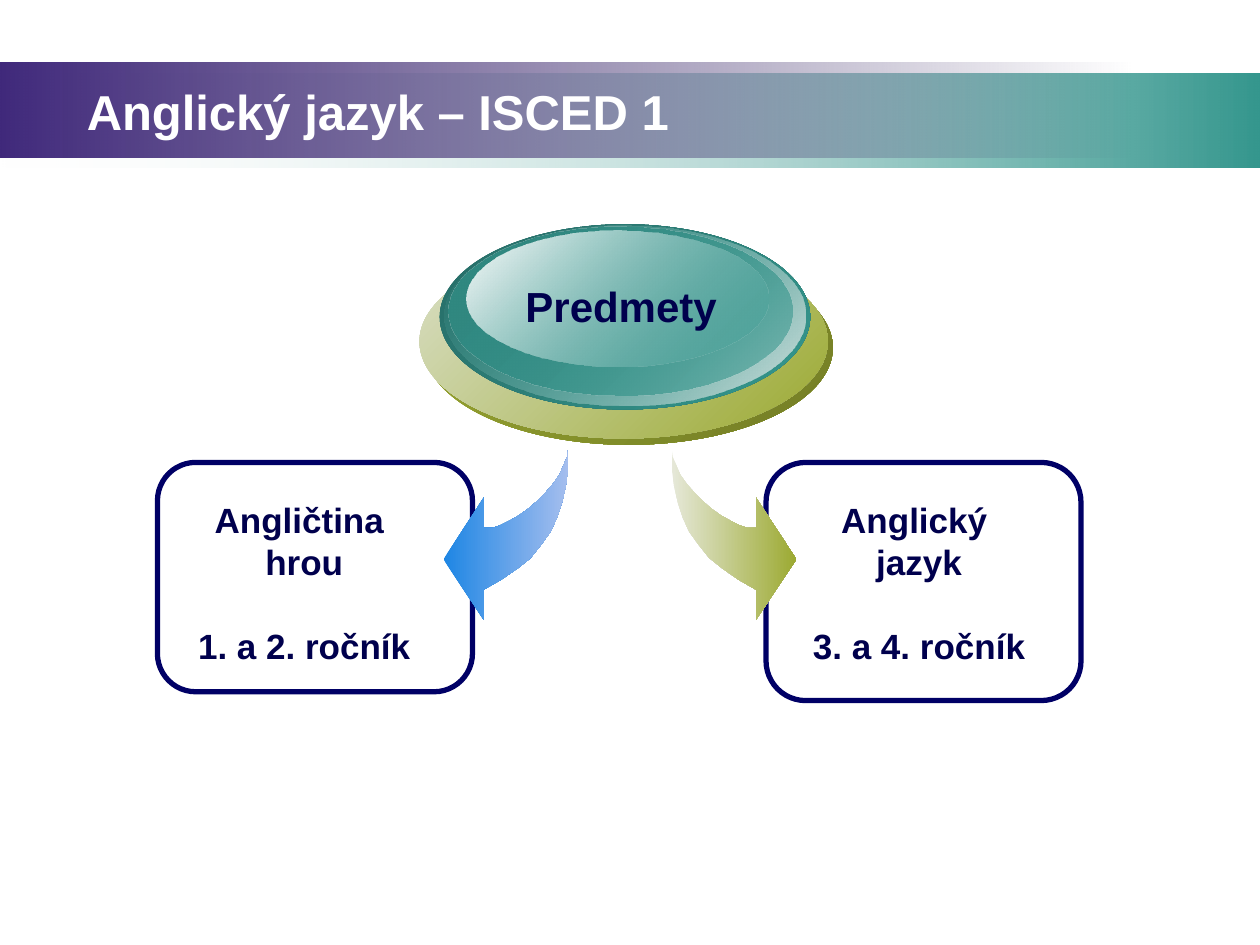
from lxml import etree
from pptx import Presentation
from pptx.dml.color import RGBColor
from pptx.enum.shapes import MSO_SHAPE as Preset
from pptx.enum.text import MSO_AUTO_SIZE as AutoSize, PP_ALIGN as Align
from pptx.oxml.ns import qn
from pptx.util import Inches, Pt

COLORS = {
    "white": "FFFFFF", "mist": "F1F5F4", "teal": "35978E",
    "teal_mid": "308880", "teal_dark": "266C66", "teal_pale": "D5E2E0",
    "purple": "40297B", "purple_dark": "2E1D58",
    "navy": "000066", "ink": "00004D",
    "blue": "1E86E4", "blue_pale": "A5BEEE",
    "olive": "9CAA32", "olive_dark": "727C25",
    "olive_pale": "DADFC7", "olive_mist": "E6E8D9",
}

# Left arrow, from its tail down to the tip and back
ARROW = [
    (4.51, 3.56), (4.51, 3.71), (4.49, 3.86), (4.46, 3.99), (4.42, 4.11),
    (4.37, 4.22), (4.29, 4.33), (4.21, 4.43), (4.11, 4.51), (3.98, 4.6),
    (3.84, 4.68), (3.84, 4.92), (3.52, 4.44), (3.84, 3.95), (3.84, 4.19),
    (3.91, 4.19), (3.97, 4.17), (4.05, 4.13), (4.12, 4.09), (4.19, 4.04),
    (4.26, 3.98), (4.33, 3.91), (4.39, 3.84), (4.44, 3.77), (4.47, 3.7),
    (4.5, 3.63),
]
MIRROR_AXIS = 4.92

# Position and size, then the two gradient stops, from back to front
DISCS = [
    ((3.37, 1.99, 3.24, 1.54), ("olive", 100), ("olive_dark", 100)),
    ((3.33, 1.94, 3.24, 1.54), ("olive_pale", 100), ("olive", 100)),
    ((3.49, 1.78, 2.94, 1.47), ("teal_dark", 100), ("teal", 100)),
    ((3.53, 1.79, 2.86, 1.43), ("teal", 0), ("teal_pale", 100)),
    ((3.56, 1.8, 2.73, 1.34), ("teal_mid", 100), ("teal", 48)),
    ((3.7, 1.83, 2.4, 1.08), ("white", 100), ("teal", 38)),
]


def rgb(name):
    return RGBColor.from_string(COLORS[name])


def fill_gradient(shape, start, end, angle=0):
    """Fill with two (colour, opacity percent) stops; angle is clockwise."""
    shape.shadow.inherit = False
    shape.line.fill.background()
    shape.fill.gradient()
    shape.fill.gradient_angle = (360 - angle) % 360
    for stop, (color, opacity) in zip(shape.fill.gradient_stops, (start, end)):
        stop.color.rgb = rgb(color)
        if opacity < 100:
            for node in shape._element.spPr.findall(".//" + qn("a:gs"))[
                    0 if stop.position == 0 else 1]:
                alpha = etree.SubElement(node, qn("a:alpha"))
                alpha.set("val", str(opacity * 1000))


def add_gradient_shape(shapes, preset, place, start, end, angle=0):
    shape = shapes.add_shape(preset, *map(Inches, place))
    fill_gradient(shape, start, end, angle)


def add_frame(page, *place):
    frame = page.shapes.add_shape(Preset.ROUNDED_RECTANGLE, *map(Inches, place))
    frame.shadow.inherit = False
    frame.fill.background()
    frame.line.color.rgb = rgb("navy")
    frame.line.width = Pt(3)


def add_arrow(page, points, start, end):
    points = [(Inches(x), Inches(y)) for x, y in points]
    builder = page.shapes.build_freeform(*points[0], scale=1.0)
    builder.add_line_segments(points[1:], close=True)
    fill_gradient(builder.convert_to_shape(), (start, 100), (end, 100))


def add_text(page, place, lines, size, color="ink", align=Align.CENTER, wrap=False):
    box = page.shapes.add_textbox(*map(Inches, place))
    box.text_frame.word_wrap = wrap
    box.text_frame.auto_size = AutoSize.SHAPE_TO_FIT_TEXT
    paras = [box.text_frame.paragraphs[0]]
    paras += [box.text_frame.add_paragraph() for _ in lines[1:]]
    for para, line in zip(paras, lines):
        para.alignment = align
        span = para.add_run()
        span.text = line
        span.font.color.rgb = rgb(color)
        for name, value in {"name": "Arial", "size": Pt(size), "bold": True}.items():
            setattr(span.font, name, value)
    return paras


def add_subject(page, left, lines):
    paras = add_text(page, (left, 3.91, 2.23, 1.45), lines, 20, wrap=True)
    for para in paras:
        para.line_spacing = Pt(24)
    paras[-1].space_before = Pt(24)


def main():
    deck = Presentation()
    deck.slide_width, deck.slide_height = Inches(10), Inches(7.5)
    page = deck.slides.add_slide(deck.slide_layouts[6])

    add_gradient_shape(page.shapes, Preset.RECTANGLE, (0, 0.58, 10, 0.75),
                       ("mist", 0), ("teal", 100))
    add_gradient_shape(page.shapes, Preset.RECTANGLE, (0, 0.5, 9, 0.75),
                       ("purple", 100), ("purple_dark", 0))

    add_frame(page, 6.08, 3.67, 2.5, 1.89)
    add_frame(page, 1.25, 3.67, 2.5, 1.82)
    add_subject(page, 1.3, ["Angličtina ", "hrou", "1. a 2. ročník"])

    add_arrow(page, ARROW, "blue", "blue_pale")
    mirrored = [(2 * MIRROR_AXIS - x, y) for x, y in ARROW]
    add_arrow(page, mirrored, "olive_mist", "olive")

    emblem = page.shapes.add_group_shape()
    for place, start, end in DISCS:
        add_gradient_shape(emblem.shapes, Preset.OVAL, place, start, end, 45)
    add_text(page, (4.06, 2.18, 1.74, 0.5), ["Predmety"], 24)

    add_text(page, (0.59, 0.6, 4.88, 0.57), ["Anglický jazyk – ISCED 1"], 28,
             "white", Align.LEFT)
    add_subject(page, 6.18, ["Anglický ", "jazyk", "3. a 4. ročník"])
    deck.save("out.pptx")


if __name__ == "__main__":
    main()
